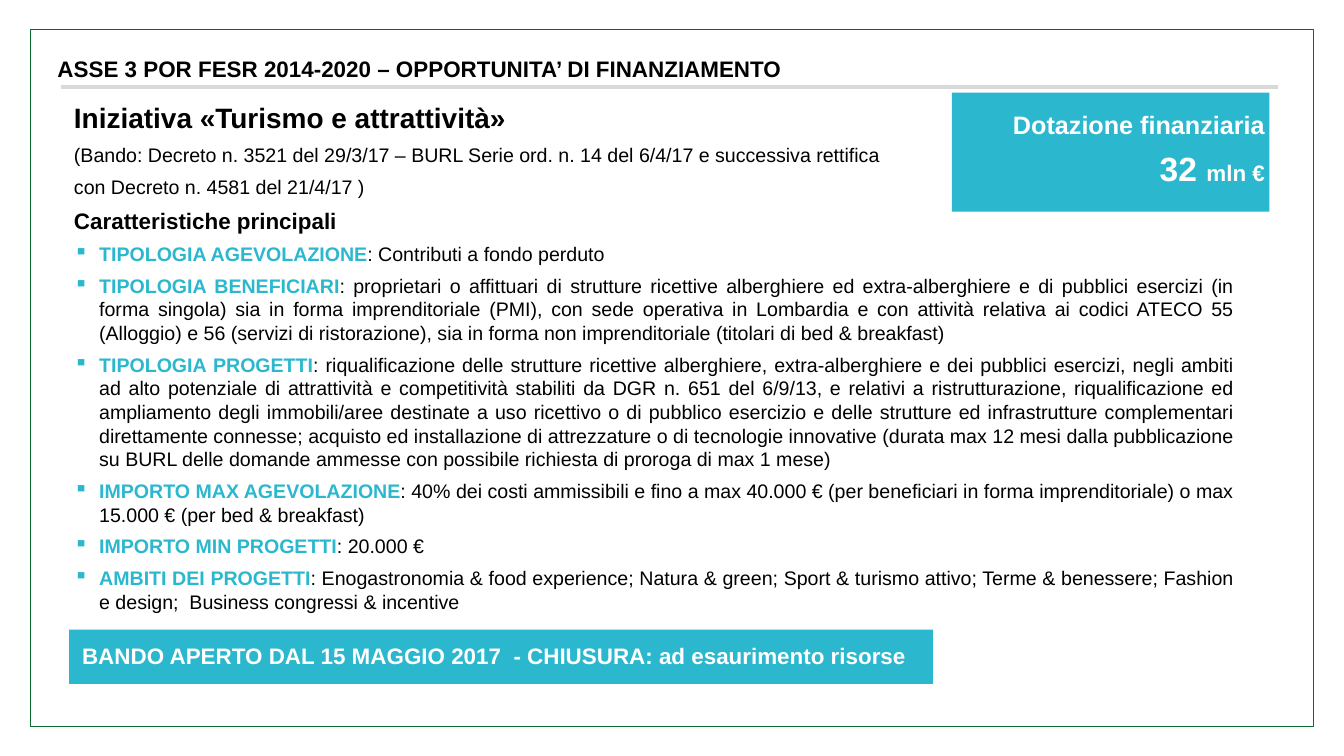
import pptx
import pptx.dml.color
import pptx.enum.shapes
import pptx.enum.text
import pptx.oxml
import pptx.oxml.ns
import pptx.util
from pptx.util import Inches

TEAL, BLACK, WHITE, GREY, GREEN = "2BB8CF", "000000", "FFFFFF", "D9D9D9", "086A2E"
ALIGN = pptx.enum.text.PP_ALIGN
INTRODUCTION = [
    ("Iniziativa «Turismo e attrattività»", 40, True),
    ("(Bando: Decreto n. 3521 del 29/3/17 – BURL Serie ord. n. 14 del 6/4/17 e successiva rettifica", 28, False),
    ("con Decreto n. 4581 del 21/4/17 )", 28, False),
    ("Caratteristiche principali", 32, True),
]
FEATURES = [
    ("TIPOLOGIA AGEVOLAZIONE", "Contributi a fondo perduto"),
    ("TIPOLOGIA BENEFICIARI",
     "proprietari o affittuari di strutture ricettive alberghiere ed extra-alberghiere e di pubblici "
     "esercizi (in forma singola) sia in forma imprenditoriale (PMI), con sede operativa in Lombardia "
     "e con attività relativa ai codici ATECO 55 (Alloggio) e 56 (servizi di ristorazione), sia in "
     "forma non imprenditoriale (titolari di bed & breakfast)"),
    ("TIPOLOGIA PROGETTI",
     "riqualificazione delle strutture ricettive alberghiere, extra-alberghiere e dei pubblici "
     "esercizi, negli ambiti ad alto potenziale di attrattività e competitività stabiliti da DGR "
     "n. 651 del 6/9/13, e relativi a ristrutturazione, riqualificazione ed ampliamento degli "
     "immobili/aree destinate a uso ricettivo o di pubblico esercizio e delle strutture ed "
     "infrastrutture complementari direttamente connesse; acquisto ed installazione di attrezzature "
     "o di tecnologie innovative (durata max 12 mesi dalla pubblicazione su BURL delle domande "
     "ammesse con possibile richiesta di proroga di max 1 mese)"),
    ("IMPORTO MAX AGEVOLAZIONE",
     "40% dei costi ammissibili e fino a max 40.000 € (per beneficiari in forma imprenditoriale) "
     "o max 15.000 € (per bed & breakfast)"),
    ("IMPORTO MIN PROGETTI", "20.000 €"),
    ("AMBITI DEI PROGETTI",
     "Enogastronomia & food experience; Natura & green; Sport & turismo attivo; Terme & benessere; "
     "Fashion e design;  Business congressi & incentive"),
]


def rgb(value):
    """Return the colour for a hex string."""
    return pptx.dml.color.RGBColor.from_string(value)


def set_values(target, values):
    """Set each attribute of the target from a dict."""
    for name, value in values.items():
        setattr(target, name, value)


def add_rectangle(slide, left, top, width, height, fill=None, line=None):
    """Add a plain rectangle with an optional fill and outline."""
    shape = slide.shapes.add_shape(
        pptx.enum.shapes.MSO_SHAPE.RECTANGLE,
        Inches(left), Inches(top), Inches(width), Inches(height))
    shape.shadow.inherit = False
    for part, color in ((shape.fill, fill), (shape.line.fill, line)):
        if color:
            part.solid()
            part.fore_color.rgb = rgb(color)
        else:
            part.background()
    if line:
        shape.line.width = pptx.util.Pt(1)


def add_text_frame(slide, left, top, width, height, wrap=True, anchor="TOP"):
    """Add a text box and return its frame."""
    frame = slide.shapes.add_textbox(
        Inches(left), Inches(top), Inches(width), Inches(height)).text_frame
    sides = ("left", "top", "right", "bottom")
    set_values(frame, {f"margin_{side}": Inches(0.1) for side in sides})
    set_values(frame, {
        "word_wrap": wrap,
        "auto_size": pptx.enum.text.MSO_AUTO_SIZE.SHAPE_TO_FIT_TEXT,
        "vertical_anchor": getattr(pptx.enum.text.MSO_ANCHOR, anchor)})
    return frame


def add_paragraph(frame, runs, align=ALIGN.LEFT, bullet=False):
    """Add runs of (text, size, bold, colour) as the next paragraph."""
    first = not frame.paragraphs[0].runs
    paragraph = frame.paragraphs[0] if first else frame.add_paragraph()
    set_values(paragraph, {"alignment": align, "space_before": pptx.util.Pt(0 if first else 12)})
    if bullet:
        properties = paragraph._p.get_or_add_pPr()
        properties.set("marL", str(Inches(0.5)))
        properties.set("indent", str(Inches(-0.5)))
        properties.append(pptx.oxml.parse_xml(
            f'<a:buChar {pptx.oxml.ns.nsdecls("a")} char="▪"/>'))
    for text, size, bold, color in runs:
        run = paragraph.add_run()
        run.text = text
        set_values(run.font, {"name": "Arial", "size": pptx.util.Pt(size), "bold": bold})
        run.font.color.rgb = rgb(color)


def add_page_frame(slide, left, top, width, height):
    """Draw the page outline and the rule under the heading."""
    rule_top = Inches(top + 1.14)
    rule = slide.shapes.add_connector(
        pptx.enum.shapes.MSO_CONNECTOR.STRAIGHT,
        Inches(left + 0.61), rule_top, Inches(left + width - 0.7), rule_top)
    rule.line.color.rgb = rgb(GREY)
    rule.line.width = pptx.util.Pt(6)
    rule._element.spPr.append(pptx.oxml.parse_xml(
        f'<a:effectLst {pptx.oxml.ns.nsdecls("a")}/>'))
    add_rectangle(slide, left, top, width, height, line=GREEN)


def add_heading(slide, left, top, width, height):
    """Write the heading of the slide."""
    frame = add_text_frame(slide, left, top, width, height, wrap=False)
    heading = "ASSE 3 POR FESR 2014-2020 – OPPORTUNITA’ DI FINANZIAMENTO "
    add_paragraph(frame, [(heading, 32, True, BLACK)], ALIGN.CENTER)


def add_description(slide, left, top, width, height):
    """Write the introduction and the bulleted features."""
    frame = add_text_frame(slide, left, top, width, height, anchor="MIDDLE")
    for text, size, bold in INTRODUCTION:
        add_paragraph(frame, [(text, size, bold, BLACK)])
    for label, detail in FEATURES:
        runs = [(label, 28, True, TEAL), (f": {detail}", 28, False, BLACK)]
        add_paragraph(frame, runs, ALIGN.JUSTIFY, bullet=True)


def add_budget(slide, left, top, width, height):
    """Draw the budget panel with its amount."""
    add_rectangle(slide, left, top, width, height, fill=TEAL)
    frame = add_text_frame(slide, left - 0.15, top + 0.23, width + 0.16, height - 0.1)
    add_paragraph(frame, [("Dotazione finanziaria", 36, True, WHITE)], ALIGN.RIGHT)
    amount = [("32 ", 48, True, WHITE), ("mln €", 32, True, WHITE)]
    add_paragraph(frame, amount, ALIGN.RIGHT)


def add_deadline(slide, left, top, width, height):
    """Draw the banner with the opening and closing dates."""
    add_rectangle(slide, left, top, width, height, fill=TEAL)
    frame = add_text_frame(slide, left + 0.16, top + 0.16, width - 0.42, 0.74, wrap=False)
    text = "BANDO APERTO DAL 15 MAGGIO 2017  - CHIUSURA: ad esaurimento risorse"
    add_paragraph(frame, [(text, 32, True, WHITE)])


def main():
    """Build the slide and save it."""
    presentation = pptx.Presentation()
    set_values(presentation, {"slide_width": Inches(26.67), "slide_height": Inches(15)})
    slide = presentation.slides.add_slide(presentation.slide_layouts[6])
    add_page_frame(slide, 0.61, 0.58, 25.46, 13.84)
    add_description(slide, 1.37, 1.85, 23.2, 10.47)
    add_heading(slide, 1.04, 0.99, 14.7, 0.73)
    add_budget(slide, 18.89, 1.84, 6.3, 2.36)
    add_deadline(slide, 1.37, 12.49, 17.14, 1.08)
    presentation.save("out.pptx")


if __name__ == "__main__":
    main()
